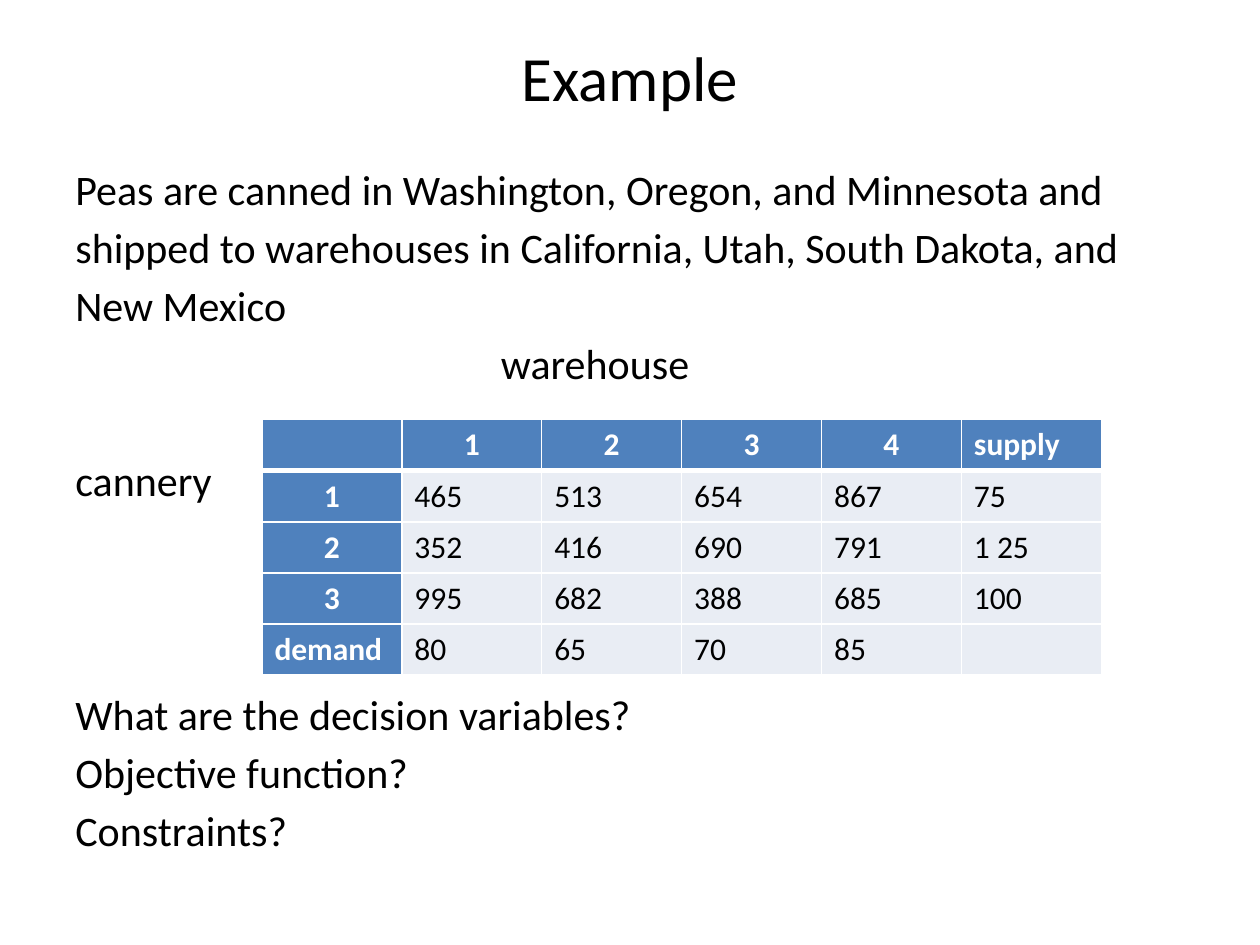
from pptx import Presentation
from pptx.dml.color import RGBColor
from pptx.enum.text import MSO_ANCHOR, PP_ALIGN
from pptx.oxml import parse_xml
from pptx.oxml.ns import nsdecls
from pptx.util import Cm, Pt


def color(hex_value):
    return RGBColor.from_string(hex_value)


def write(para, text, hex_value, **formats):
    span = para.add_run()
    span.text = text
    span.font.color.rgb = color(hex_value)
    for name, value in ({"name": "Calibri"} | formats).items():
        setattr(span.font, name, value)


deck = Presentation()
deck.slide_width, deck.slide_height = Cm(25.4), Cm(19.05)
page = deck.slides.add_slide(deck.slide_layouts[5])

title = page.shapes.title
title_place = {"left": Cm(1.27), "top": Cm(0.76), "width": Cm(22.86), "height": Cm(1.57)}
for name, value in title_place.items():
    setattr(title, name, value)
title.text_frame.vertical_anchor = MSO_ANCHOR.MIDDLE
title.text_frame.paragraphs[0].alignment = PP_ALIGN.CENTER
write(title.text_frame.paragraphs[0], "Example", "000000", size=Pt(36))

line_pitch = 33.6
paragraph_gap = 4.3
warehouse_indent = Cm(8.58)
body_lines = [
    ("Peas are canned in Washington, Oregon, and Minnesota and", 0, 0),
    ("shipped to warehouses in California, Utah, South Dakota, and", 0, 0),
    ("New Mexico", 0, 0),
    ("warehouse", 0, warehouse_indent),
    ("cannery", 1, 0),
    ("What are the decision variables?", 3, 0),
    ("Objective function?", 0, 0),
    ("Constraints?", 0, 0),
]
body = page.shapes.add_textbox(Cm(1.27), Cm(3.18), Cm(22.86), Cm(13.84))
body.text_frame.word_wrap = True
for index, (text, lines_skipped, indent) in enumerate(body_lines):
    para = body.text_frame.add_paragraph() if index else body.text_frame.paragraphs[0]
    para.space_before = Pt(paragraph_gap + lines_skipped * line_pitch)
    if indent:
        para._p.get_or_add_pPr().set("marL", str(indent))
    write(para, text, "000000", size=Pt(24))

costs = [
    ["", "1", "2", "3", "4", "supply"],
    ["1", "465", "513", "654", "867", "75"],
    ["2", "352", "416", "690", "791", "1 25"],
    ["3", "995", "682", "388", "685", "100"],
    ["demand", "80", "65", "70", "85", ""],
]
row_height, column_width = Cm(1.03), Cm(2.82)
table = page.shapes.add_table(
    len(costs), len(costs[0]), Cm(5.28), Cm(8.46),
    column_width * len(costs[0]), row_height * len(costs),
).table
table.first_row = table.first_col = True
for column in table.columns:
    column.width = column_width
for row_index, values in enumerate(costs):
    table.rows[row_index].height = row_height
    for column_index, text in enumerate(values):
        cell = table.cell(row_index, column_index)
        is_heading = row_index == 0 or column_index == 0
        border_widths = {
            "lnL": 1,
            "lnR": 1,
            "lnT": 3 if row_index == 1 else 1,
            "lnB": 3 if row_index == 0 else 1,
        }
        for side, width in border_widths.items():
            cell._tc.get_or_add_tcPr().append(parse_xml(
                f'<a:{side} {nsdecls("a")} w="{Pt(width)}"><a:solidFill>'
                f'<a:srgbClr val="FFFFFF"/></a:solidFill></a:{side}>'
            ))
        cell.fill.solid()
        cell.fill.fore_color.rgb = color("4F81BD" if is_heading else "E9EDF4")
        if text:
            para = cell.text_frame.paragraphs[0]
            if is_heading and text.isdigit():
                para.alignment = PP_ALIGN.CENTER
            text_color = "FFFFFF" if is_heading else "000000"
            write(para, text, text_color, size=Pt(18), bold=is_heading)

deck.save("out.pptx")
